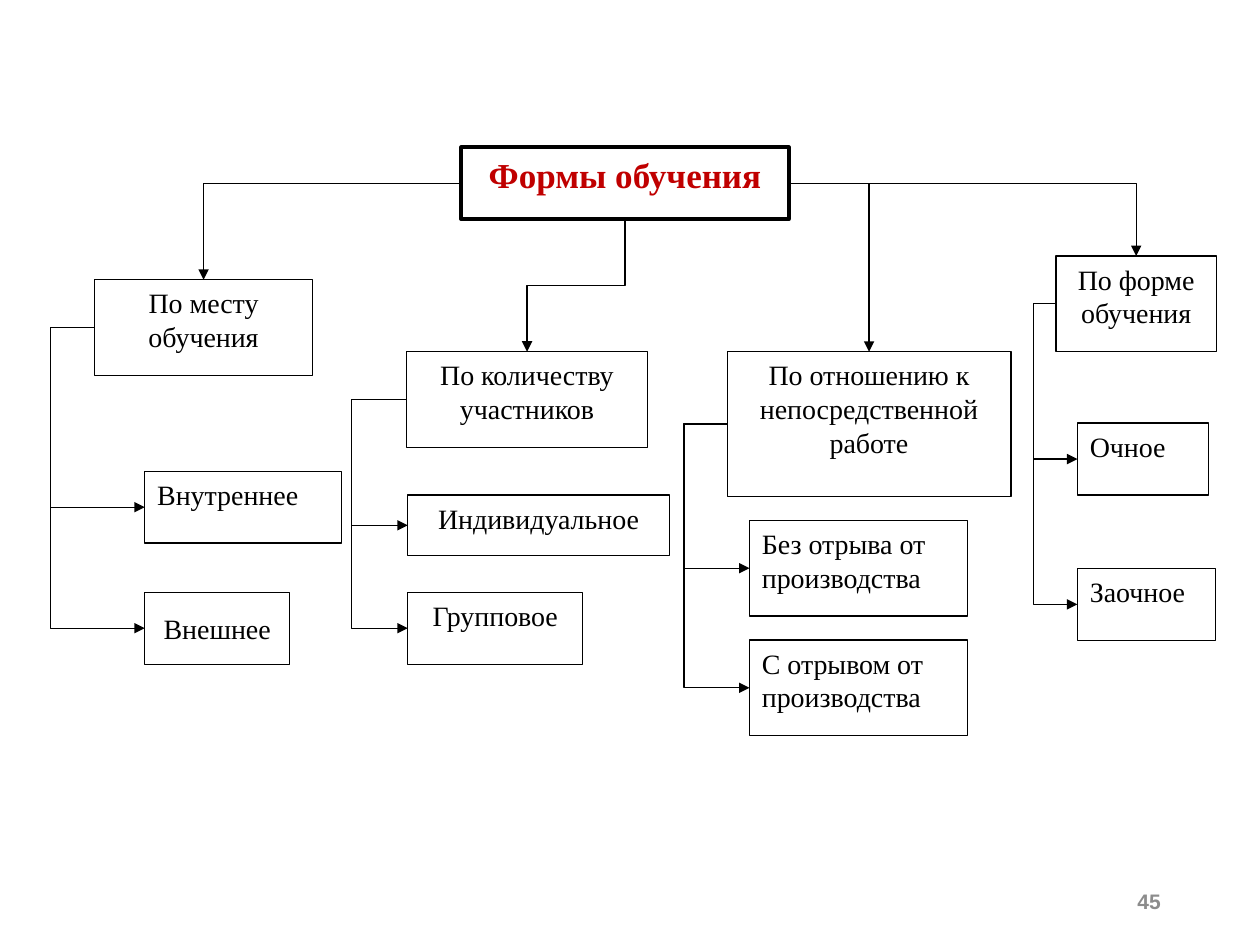
"""Build a slide with a tree diagram of the forms of training."""
from dataclasses import dataclass

from lxml import etree
from pptx import Presentation
from pptx.dml.color import RGBColor
from pptx.enum.shapes import MSO_CONNECTOR, MSO_SHAPE
from pptx.enum.text import MSO_ANCHOR, MSO_AUTO_SIZE, PP_ALIGN
from pptx.oxml.ns import qn
from pptx.util import Cm, Pt

PROCESS = MSO_SHAPE.FLOWCHART_PROCESS
ELBOW = MSO_CONNECTOR.ELBOW
TOP, MIDDLE = MSO_ANCHOR.TOP, MSO_ANCHOR.MIDDLE
LEFT, CENTER, RIGHT = PP_ALIGN.LEFT, PP_ALIGN.CENTER, PP_ALIGN.RIGHT


@dataclass(frozen=True)
class Theme:
    ink: RGBColor = RGBColor(0, 0, 0)
    paper: RGBColor = RGBColor(255, 255, 255)
    accent: RGBColor = RGBColor(0xC0, 0, 0)
    muted: RGBColor = RGBColor(0x8C, 0x8C, 0x8C)
    font: str = "Times New Roman"
    number_font: str = "Arial"
    title_size: Pt = Pt(20)
    node_size: Pt = Pt(16)
    number_size: Pt = Pt(12)
    thick: Pt = Pt(2.25)
    thin: Pt = Pt(0.75)


THEME = Theme()


def write(shape, text, size, color, align, anchor=TOP, font=THEME.font, bold=False):
    frame = shape.text_frame
    frame.word_wrap = True
    frame.auto_size = MSO_AUTO_SIZE.NONE
    frame.vertical_anchor = anchor
    paragraph = frame.paragraphs[0]
    paragraph.alignment = align
    run = paragraph.add_run()
    run.text = text
    run.font.name, run.font.size, run.font.bold = font, size, bold
    run.font.color.rgb = color


def add_arrow(begin, end, preset="bentConnector3", bend=0.5, turn=0):
    arrow = slide.shapes.add_connector(ELBOW, *map(Cm, begin + end))
    arrow.line.color.rgb = THEME.ink
    arrow.line.width = THEME.thin
    etree.SubElement(arrow.line._get_or_add_ln(), qn("a:tailEnd"), type="triangle")
    properties = arrow._element.spPr
    etree.SubElement(properties, qn("a:effectLst"))
    properties.find(qn("a:xfrm")).set("rot", str(turn * 60000))
    geometry = properties.find(qn("a:prstGeom"))
    geometry.set("prst", preset)
    if preset == "bentConnector3":
        etree.SubElement(geometry.find(qn("a:avLst")), qn("a:gd"),
                         name="adj1", fmla=f"val {round(bend * 100000)}")


deck = Presentation()
deck.slide_width, deck.slide_height = Cm(25.4), Cm(19.05)
slide = deck.slides.add_slide(deck.slide_layouts[5])

root_left, root_top, root_width, root_height = 9.3, 2.97, 6.6, 1.45
root = slide.shapes.title
root.left, root.top = Cm(root_left), Cm(root_top)
root.width, root.height = Cm(root_width), Cm(root_height)
root.fill.solid()
root.fill.fore_color.rgb = THEME.paper
root.line.color.rgb = THEME.ink
root.line.width = THEME.thick
write(root, "Формы обучения", THEME.title_size, THEME.accent, CENTER, bold=True)

page_number = slide.shapes.add_textbox(Cm(17.93), Cm(17.65), Cm(5.72), Cm(1.02))
write(page_number, "45", THEME.number_size, THEME.muted, RIGHT, MIDDLE,
      THEME.number_font, True)

branches = [
    (1.02, [
        ("По месту обучения", 1.91, 5.64, 4.39, 1.93, CENTER, TOP),
        ("Внутреннее", 2.92, 9.5, 3.96, 1.45, LEFT, TOP),
        ("Внешнее", 2.92, 11.94, 2.92, 1.45, CENTER, MIDDLE),
    ]),
    (7.09, [
        ("По количеству участников", 8.2, 7.09, 4.85, 1.93, CENTER, TOP),
        ("Индивидуальное", 8.22, 9.98, 5.28, 1.22, CENTER, TOP),
        ("Групповое", 8.22, 11.94, 3.53, 1.45, CENTER, TOP),
    ]),
    (13.79, [
        ("По отношению к непосредственной работе", 14.66, 7.09, 5.72, 2.92, CENTER, TOP),
        ("Без отрыва от производства", 15.11, 10.49, 4.39, 1.93, LEFT, TOP),
        ("С отрывом от производства", 15.11, 12.9, 4.39, 1.93, LEFT, TOP),
    ]),
    (20.83, [
        ("По форме обучения", 21.29, 5.16, 3.23, 1.93, CENTER, TOP),
        ("Очное", 21.72, 8.53, 2.64, 1.45, LEFT, TOP),
        ("Заочное", 21.72, 11.46, 2.79, 1.45, LEFT, TOP),
    ]),
]

root_middle = root_top + root_height / 2
root_center = root_left + root_width / 2
root_right = root_left + root_width
root_bottom = root_top + root_height

for trunk, nodes in branches:
    for label, left, top, width, height, align, anchor in nodes:
        node = slide.shapes.add_shape(PROCESS, Cm(left), Cm(top), Cm(width), Cm(height))
        node.shadow.inherit = False
        node.fill.solid()
        node.fill.fore_color.rgb = THEME.paper
        node.line.color.rgb = THEME.ink
        node.line.width = THEME.thin
        write(node, label, THEME.node_size, THEME.ink, align, anchor)

    _, left, top, width, height, *_ = nodes[0]
    center = left + width / 2
    if root_left < center < root_right:
        mid_x, mid_y = (root_center + center) / 2, (root_bottom + top) / 2
        reach, rise = (top - root_bottom) / 2, (root_center - center) / 2
        add_arrow((mid_x - reach, mid_y - rise), (mid_x + reach, mid_y + rise), turn=90)
    else:
        side = root_left if center < root_left else root_right
        add_arrow((side, root_middle), (center, top), "bentConnector2")

    for _, child_left, child_top, _, child_height, *_ in nodes[1:]:
        add_arrow((left, top + height / 2), (child_left, child_top + child_height / 2),
                  bend=(trunk - left) / (child_left - left))

deck.save("out.pptx")
